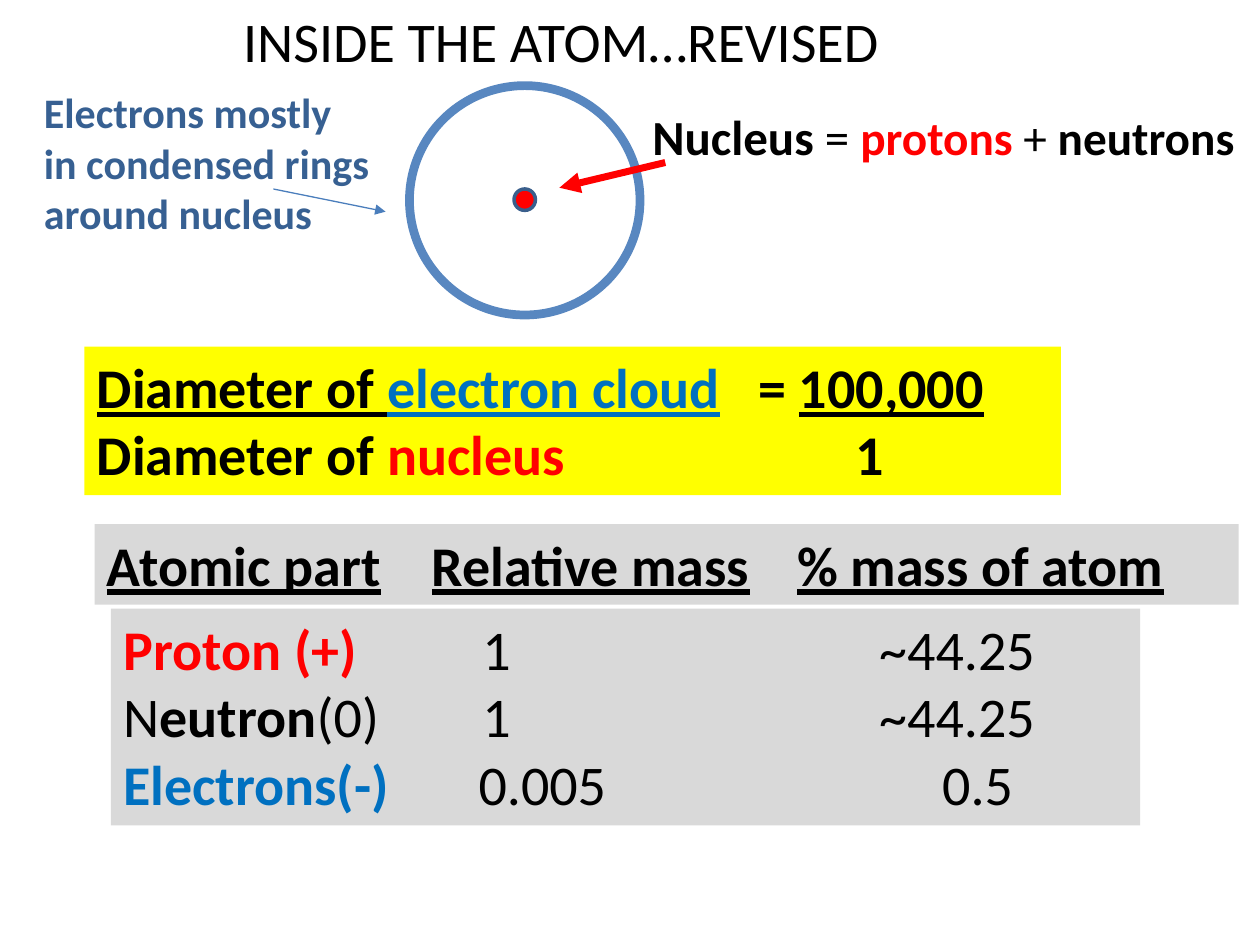
from dataclasses import dataclass

from lxml import etree
from pptx import Presentation
from pptx.dml.color import RGBColor
from pptx.enum import shapes, text
from pptx.oxml import ns
from pptx.util import Inches, Pt


@dataclass(frozen=True)
class Theme:
    font: str = "Calibri"
    black: str = "000000"
    red: str = "FF0000"
    blue: str = "0070C0"
    navy: str = "376092"
    ring: str = "5887C0"
    core_edge: str = "3A5F8C"
    pointer: str = "4B7EBC"
    yellow: str = "FFFF00"
    gray: str = "D9D9D9"
    large: float = 32
    label: float = 28
    label_accent: float = 27
    note: float = 24


THEME = Theme()


@dataclass(frozen=True)
class Run:
    words: str
    color: str = THEME.black
    bold: bool = True
    underline: bool = False
    size: float = THEME.large


@dataclass(frozen=True)
class Line:
    runs: tuple[Run, ...]
    tabs: tuple[float, ...] = ()


@dataclass(frozen=True)
class Panel:
    box: tuple[float, float, float, float]
    lines: tuple[Line, ...]
    fill: str | None = None


@dataclass(frozen=True)
class Circle:
    box: tuple[float, float, float, float]
    edge: str
    width: float
    fill: str | None = None


@dataclass(frozen=True)
class Arrow:
    start: tuple[float, float]
    end: tuple[float, float]
    color: str
    width: float


def rgb(color: str) -> RGBColor:
    return RGBColor.from_string(color)


def paint(shape, fill: str | None) -> None:
    if fill:
        shape.fill.solid()
        shape.fill.fore_color.rgb = rgb(fill)
    else:
        shape.fill.background()


def add_run(paragraph, words: str, *, color: str, bold: bool, underline: bool, size: float) -> None:
    run = paragraph.add_run()
    run.text = words
    run.font.name = THEME.font
    run.font.size = Pt(size)
    run.font.bold = bold
    run.font.underline = underline
    run.font.color.rgb = rgb(color)


def set_tabs(paragraph, stops: tuple[float, ...]) -> None:
    tab_list = etree.SubElement(paragraph._p.get_or_add_pPr(), ns.qn("a:tabLst"))
    for stop in stops:
        etree.SubElement(tab_list, ns.qn("a:tab"), pos=str(Inches(stop)), algn="l")


def write_lines(frame, lines: tuple[Line, ...]) -> None:
    frame.word_wrap = True
    frame.auto_size = text.MSO_AUTO_SIZE.SHAPE_TO_FIT_TEXT
    frame.vertical_anchor = text.MSO_ANCHOR.TOP
    for index, line in enumerate(lines):
        paragraph = frame.add_paragraph() if index else frame.paragraphs[0]
        paragraph.alignment = text.PP_ALIGN.LEFT
        if line.tabs:
            set_tabs(paragraph, line.tabs)
        for run in line.runs:
            add_run(paragraph, run.words, color=run.color, bold=run.bold,
                    underline=run.underline, size=run.size)


def draw_title(slide, panel: Panel) -> None:
    title = slide.shapes.title
    title.left, title.top, title.width, title.height = map(Inches, panel.box)
    write_lines(title.text_frame, panel.lines)


def draw_panel(slide, panel: Panel) -> None:
    box = slide.shapes.add_textbox(*map(Inches, panel.box))
    paint(box, panel.fill)
    write_lines(box.text_frame, panel.lines)


def draw_circle(slide, circle: Circle) -> None:
    oval = slide.shapes.add_shape(shapes.MSO_SHAPE.OVAL, *map(Inches, circle.box))
    oval.shadow.inherit = False
    paint(oval, circle.fill)
    oval.line.color.rgb = rgb(circle.edge)
    oval.line.width = Pt(circle.width)


def draw_arrow(slide, arrow: Arrow) -> None:
    connector = slide.shapes.add_connector(
        shapes.MSO_CONNECTOR.STRAIGHT, *map(Inches, arrow.start + arrow.end))
    connector.line.color.rgb = rgb(arrow.color)
    connector.line.width = Pt(arrow.width)
    etree.SubElement(connector.line._get_or_add_ln(), ns.qn("a:tailEnd"), type="triangle")
    etree.SubElement(connector._element.spPr, ns.qn("a:effectLst"))


TITLE = Panel((1.83, 0, 7.08, 0.64), (Line((Run("INSIDE THE ATOM…REVISED", bold=False),)),))

RATIO_TABS = (5.25, 6.02)
PART_TABS = (2.85, 6)
PANELS = (
    Panel((0.75, 4.16, 9.08, 0.64), (
        Line((Run("Atomic part\tRelative mass\t% mass of atom", underline=True),), (2.58, 5.48)),
    ), THEME.gray),
    Panel((0.88, 4.83, 8.17, 1.72), (
        Line((Run("Proton (+)", THEME.red), Run("\t1\t~44.25", bold=False)), PART_TABS),
        Line((Run("N", bold=False), Run("eutron"), Run("(0)\t1\t~44.25", bold=False)), PART_TABS),
        Line((Run("Electrons(-)", THEME.blue), Run("\t0.005\t0.5", bold=False)), (2.82, 6.5)),
    ), THEME.gray),
    Panel((0.67, 2.75, 7.75, 1.18), (
        Line((Run("Diameter of ", underline=True),
              Run("electron cloud", THEME.blue, underline=True),
              Run("\t= "), Run("100,000", underline=True)), RATIO_TABS[:1]),
        Line((Run("Diameter of"), Run(" nucleus", THEME.red), Run("\t1")), RATIO_TABS[1:]),
    ), THEME.yellow),
    Panel((5.08, 0.8, 4.92, 0.57), (
        Line((Run("Nucleus", size=THEME.label),
              Run(" = ", bold=False, size=THEME.label),
              Run("protons", THEME.red, size=THEME.label_accent),
              Run(" + ", bold=False, size=THEME.label_accent),
              Run("neutrons", size=THEME.label_accent))),
    )),
    Panel((0.25, 0.64, 2.81, 1.31), (
        Line((Run("Electrons mostly in condensed rings around nucleus",
                  THEME.navy, size=THEME.note),)),
    )),
)

CIRCLES = (
    Circle((3.25, 0.68, 1.83, 1.82), THEME.ring, 5),
    Circle((4.08, 1.5, 0.17, 0.17), THEME.core_edge, 2, THEME.red),
)

ARROWS = (
    Arrow((5.28, 1.29), (4.44, 1.49), THEME.red, 4),
    Arrow((2.17, 1.5), (3.06, 1.68), THEME.pointer, 0.75),
)


def main() -> None:
    deck = Presentation()
    deck.slide_width, deck.slide_height = Inches(10), Inches(7.5)
    slide = deck.slides.add_slide(deck.slide_layouts.get_by_name("Title Only"))
    draw_title(slide, TITLE)
    for circle in CIRCLES:
        draw_circle(slide, circle)
    for panel in PANELS:
        draw_panel(slide, panel)
    for arrow in ARROWS:
        draw_arrow(slide, arrow)
    deck.save("out.pptx")


if __name__ == "__main__":
    main()
